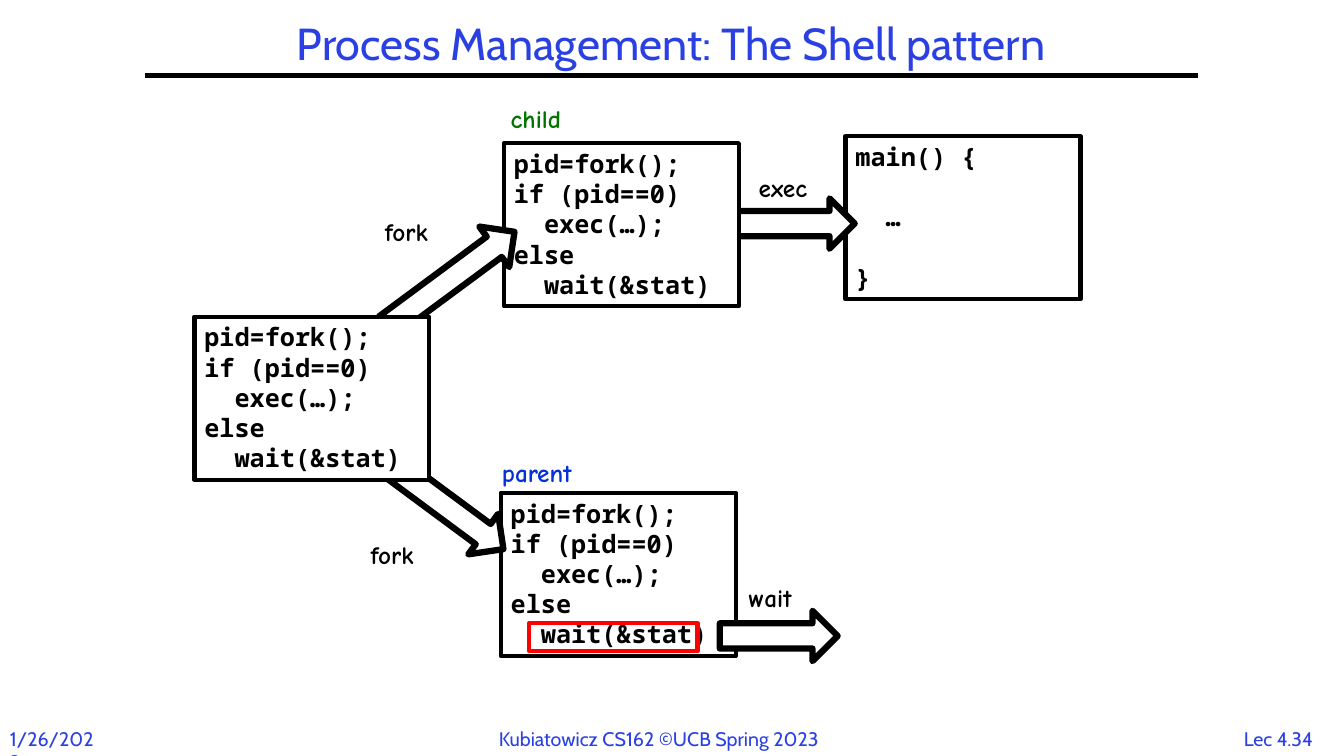
from pptx import Presentation
from pptx import util as u
from pptx.dml import color
from pptx.enum import shapes, text
from pptx.oxml import ns
from lxml import etree

theme = {
    "ink": "000000", "paper": "FFFFFF", "blue": "2A40E2",
    "child": "007600", "parent": "0330D8", "mark": "FF0000",
    "head": {"name": "Cabin", "size": u.Pt(32)},
    "foot": {"name": "Cabin", "size": u.Pt(14)},
    "label": {"name": "Comic Neue", "size": u.Pt(18), "bold": True},
    "code": {"name": "Noto Sans Mono", "size": u.Pt(18), "bold": True},
    "pitch": u.Pt(21.6),
}
LEFT, MID = text.PP_ALIGN.LEFT, text.PP_ALIGN.CENTER
RECT, ARROW = shapes.MSO_SHAPE.RECTANGLE, shapes.MSO_SHAPE.RIGHT_ARROW

deck = Presentation()
deck.slide_width, deck.slide_height = u.Cm(33.87), u.Cm(19.05)
slide = deck.slides.add_slide(deck.slide_layouts[6])


def draw(home, kind, at, fill, line, width):
    """Add an outlined shape, placed in centimetres."""
    form = home.add_shape(kind, *map(u.Cm, at))
    form.shadow.inherit = False
    if fill:
        form.fill.solid()
        form.fill.fore_color.rgb = color.RGBColor.from_string(theme[fill])
    else:
        form.fill.background()
    form.line.color.rgb = color.RGBColor.from_string(theme[line])
    form.line.width = u.Pt(width)
    return form


def write(form, lines, style, ink, align=LEFT, wrap=False, **para):
    """Fill a frame; each line is (words, indent, space before)."""
    frame = form.text_frame
    frame.word_wrap = wrap
    frame.vertical_anchor = text.MSO_ANCHOR.TOP
    for n, (words, indent, gap) in enumerate(lines):
        row = frame.paragraphs[0] if n == 0 else frame.add_paragraph()
        look = {"alignment": align, "space_before": gap, **para}
        for key, value in look.items():
            setattr(row, key, value)
        if indent:
            row._p.get_or_add_pPr().set("marL", str(indent))
        run = row.add_run()
        run.text = words
        for key, value in theme[style].items():
            setattr(run.font, key, value)
        run.font.color.rgb = color.RGBColor.from_string(theme[ink])


# Footer
for words, left, width, align in [
    ("Lec 4.34", 30.99, 2.46, MID),
    ("1/26/2023", 0, 2.72, LEFT),
    ("Kubiatowicz CS162 ©UCB Spring 2023", 12.32, 9.22, LEFT),
]:
    note = slide.shapes.add_textbox(*map(u.Cm, (left, 18.19, width, 0.85)))
    write(note, [(words, 0, 0)], "foot", "blue", align)

# Title and rule
rule = slide.shapes.add_connector(
    shapes.MSO_CONNECTOR.STRAIGHT, u.Cm(3.66), u.Cm(1.9), u.Cm(30.2), u.Cm(1.9))
rule.line.color.rgb = color.RGBColor.from_string(theme["ink"])
rule.line.width = u.Pt(3)
etree.SubElement(rule._element.spPr, ns.qn("a:effectLst"))

title = slide.shapes.add_textbox(*map(u.Cm, (3.66, 0.43, 26.52, 1.47)))
write(title, [("Process Management: The Shell pattern", 0, 0)],
      "head", "blue", MID, True, line_spacing=0.9)
title.text_frame.vertical_anchor = text.MSO_ANCHOR.MIDDLE

# Code boxes and block arrows, from back to front
step = theme["pitch"]
shell = [("pid=fork();", 0, 0), ("if (pid==0)", 0, 0), ("exec(…);", step, 0),
         ("else", 0, 0), ("wait(&stat)", step, 0)]
main = [("main() {", 0, 0), ("…", step, step), ("}", 0, step)]
group = slide.shapes.add_group_shape()
pair = group.shapes
top = slide.shapes

for home, left, y, fill, lines, turn, width in [
    (top, 18.14, 15.39, "paper", None, 0, 2.97),
    (top, 21.31, 3.43, None, main, 0, 5.92),
    (top, 18.57, 5, "paper", None, 0, 2.97),
    (pair, 12.62, 12.42, "paper", shell, 0, 5.92),
    (top, 12.7, 3.61, "paper", shell, 0, 5.92),
    (top, 9.35, 6.4, "paper", None, 323.5, 4.01),
    (top, 9.07, 12.01, "paper", None, 36.5, 4.01),
    (top, 4.9, 7.98, "paper", shell, 0, 5.92),
]:
    if lines:
        box = draw(home, RECT, (left, y, width, 4.11), fill, "ink", 3)
        write(box, lines, "code", "ink", wrap=True, line_spacing=step)
    else:
        arrow = draw(home, ARROW, (left, y, width, 1.27), fill, "ink", 4.5)
        arrow.rotation = turn

# Red frame on the waiting line
draw(pair, RECT, (13.34, 15.7, 4.24, 0.71), None, "mark", 3)

# Labels
for words, left, y, width, ink in [
    ("child", 12.62, 2.49, 2.01, "child"),
    ("parent", 12.4, 11.4, 2.51, "parent"),
    ("fork", 9.45, 5.33, 1.83, "ink"),
    ("fork", 9.09, 13.46, 1.83, "ink"),
    ("wait", 18.62, 14.55, 1.8, "ink"),
    ("exec", 18.87, 4.22, 1.93, "ink"),
]:
    label = top.add_textbox(*map(u.Cm, (left, y, width, 1.02)))
    write(label, [(words, 0, 0)], "label", ink)

deck.save("out.pptx")
